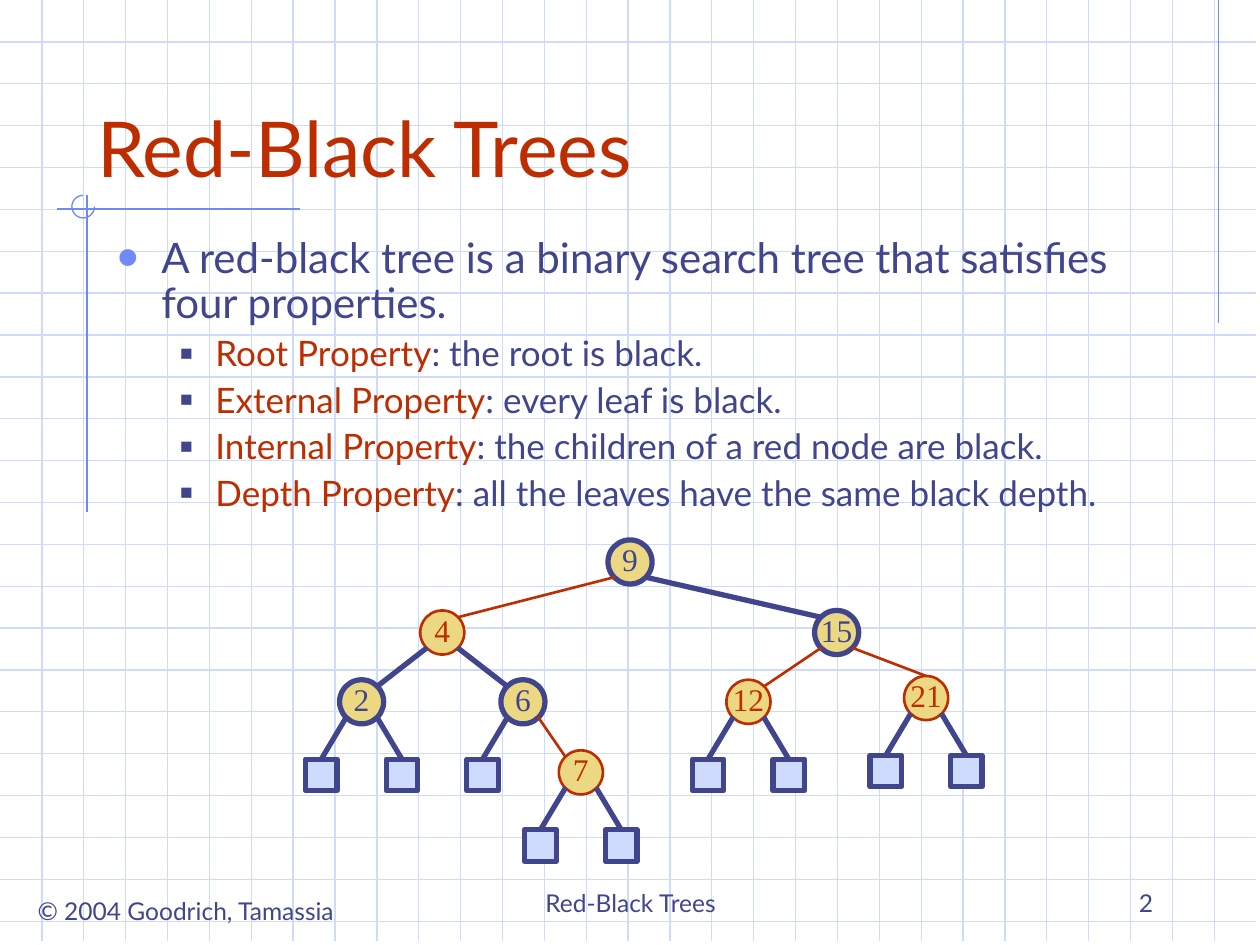
from dataclasses import dataclass
from typing import Optional

from lxml import etree
from pptx import Presentation
from pptx.dml.color import RGBColor
from pptx.enum.shapes import MSO_CONNECTOR, MSO_SHAPE
from pptx.enum.text import MSO_ANCHOR, MSO_AUTO_SIZE, PP_ALIGN
from pptx.oxml.ns import qn
from pptx.util import Inches, Pt

STRAIGHT = MSO_CONNECTOR.STRAIGHT
ELLIPSE, SQUARE, ARC = MSO_SHAPE.OVAL, MSO_SHAPE.RECTANGLE, MSO_SHAPE.ARC
TOP, MIDDLE, BOTTOM = MSO_ANCHOR.TOP, MSO_ANCHOR.MIDDLE, MSO_ANCHOR.BOTTOM
LEFT, CENTER, RIGHT = PP_ALIGN.LEFT, PP_ALIGN.CENTER, PP_ALIGN.RIGHT
NO_AUTOFIT = MSO_AUTO_SIZE.NONE

NAVY, RED, BLUE, PALE, GOLD = "40458C", "BE2D00", "6F89F7", "CFDBFD", "ECD882"
SANS, SERIF = "Lato", "Times New Roman"

PAPER_WIDTH, PAPER_HEIGHT = 9.97, 7.47
PAPER_COLUMNS, PAPER_ROWS = 30, 23
PITCH = PAPER_WIDTH / PAPER_COLUMNS

NODE_SIZE, LEAF_SIZE = 0.35, 0.25
JOINT = 0.12  # offset of a circle's diagonal joints from its centre
LEAF_SPREAD, LEAF_DROP = 0.32, 0.58
LINE_WIDTH = {NAVY: 3, RED: 1.5}

PROPERTIES = [
    ("Root Property", ": the root is black."),
    ("External Property", ": every leaf is black."),
    ("Internal Property", ": the children of a red node are black."),
    ("Depth Property", ": all the leaves have the same black depth."),
]


@dataclass
class Node:
    """A tree node by its centre; a missing child is an external leaf."""
    key: str
    color: str
    x: float
    y: float
    left: Optional["Node"] = None
    right: Optional["Node"] = None
    joined_at_top: bool = False


TREE = Node("9", NAVY, 5, 4.46,
            Node("4", RED, 3.51, 5.02,
                 Node("2", NAVY, 2.87, 5.57),
                 Node("6", NAVY, 4.15, 5.57,
                      right=Node("7", RED, 4.61, 6.13))),
            Node("15", NAVY, 6.64, 5.02,
                 Node("12", RED, 5.94, 5.57),
                 Node("21", RED, 7.35, 5.54, joined_at_top=True)))


def rgb(color):
    return RGBColor.from_string(color)


def set_values(target, values):
    for name, value in values.items():
        setattr(target, name, value)


def place(shape, left, top, width, height):
    set_values(shape, {"left": Inches(left), "top": Inches(top),
                       "width": Inches(width), "height": Inches(height)})


def style_line(line, color, width):
    line.color.rgb = rgb(color)
    line.width = Pt(width)


def add_run(paragraph, text, size, color, font=SANS):
    run = paragraph.add_run()
    run.text = text
    set_values(run.font, {"name": font, "size": Pt(size)})
    run.font.color.rgb = rgb(color)


def add_line(slide, start, end, color, width=0.75):
    line = slide.shapes.add_connector(
        STRAIGHT, *(Inches(value) for value in (*start, *end)))
    style_line(line.line, color, width)
    etree.SubElement(line.element.spPr, qn("a:effectLst"))
    return line


def add_preset(slide, preset, center, size, fill, color, width):
    left, top = (value - size / 2 for value in center)
    shape = slide.shapes.add_shape(
        preset, *(Inches(value) for value in (left, top, size, size)))
    shape.shadow.inherit = False
    if fill:
        shape.fill.solid()
        shape.fill.fore_color.rgb = rgb(fill)
    else:
        shape.fill.background()
    style_line(shape.line, color, width)
    return shape


def add_graph_paper(slide):
    for row in range(1, PAPER_ROWS):
        add_line(slide, (0, row * PITCH), (PAPER_WIDTH, row * PITCH), PALE)
    for column in range(1, PAPER_COLUMNS):
        add_line(slide, (column * PITCH, 0), (column * PITCH, PAPER_HEIGHT), PALE)


def add_ornament(slide):
    add_line(slide, (9.67, 0), (9.67, 2.56), BLUE)
    add_line(slide, (2.38, 1.66), (0.45, 1.66), BLUE)
    add_line(slide, (0.69, 1.55), (0.69, 4.06), BLUE)
    arc = add_preset(slide, ARC, (0.66, 1.64), 0.18, None, BLUE, 0.75)
    arc.adjustments[0] = 0
    arc.adjustments[1] = 162  # 270 degrees


def add_footer(slide, text, box, alignment, anchor, wrap=True):
    footer = slide.shapes.add_textbox(*(Inches(value) for value in box))
    set_values(footer.text_frame, {"word_wrap": wrap, "vertical_anchor": anchor})
    paragraph = footer.text_frame.paragraphs[0]
    paragraph.alignment = alignment
    add_run(paragraph, text, 14, NAVY)


def fill_title(title, text):
    place(title, 0.67, 0.33, 8.5, 1.25)
    set_values(title.text_frame, {"vertical_anchor": BOTTOM, "auto_size": NO_AUTOFIT})
    paragraph = title.text_frame.paragraphs[0]
    paragraph.alignment = LEFT
    add_run(paragraph, text, 44, RED)


def format_bullet(paragraph, character, color, percent, indent, hanging, before):
    properties = paragraph._p.get_or_add_pPr()
    properties.set("marL", str(Inches(indent)))
    properties.set("indent", str(-Inches(hanging)))
    bullet_color = etree.SubElement(properties, qn("a:buClr"))
    etree.SubElement(bullet_color, qn("a:srgbClr"), val=color)
    etree.SubElement(properties, qn("a:buSzPct"), val=str(percent * 1000))
    etree.SubElement(properties, qn("a:buChar"), char=character)
    set_values(paragraph, {"line_spacing": 0.9, "space_before": Pt(before)})


def fill_body(body):
    place(body, 0.83, 1.83, 8.58, 2.42)
    frame = body.text_frame
    set_values(frame, {"vertical_anchor": TOP, "auto_size": NO_AUTOFIT})
    definition = frame.paragraphs[0]
    format_bullet(definition, "•", BLUE, 147, 0.35, 0.35, 0)
    add_run(definition, "A red-black tree is a binary search tree that "
                        "satisfies four properties.", 24, NAVY)
    for name, meaning in PROPERTIES:
        paragraph = frame.add_paragraph()
        paragraph.level = 1
        format_bullet(paragraph, "■", NAVY, 60, 0.78, 0.28, 5)
        add_run(paragraph, name, 20, RED)
        add_run(paragraph, meaning, 20, NAVY)


def add_node(slide, node):
    circle = add_preset(slide, ELLIPSE, (node.x, node.y), NODE_SIZE, GOLD,
                        node.color, LINE_WIDTH[node.color])
    frame = circle.text_frame
    set_values(frame, {"margin_left": 0, "margin_right": 0, "margin_top": 0,
                       "margin_bottom": Inches(0.05), "word_wrap": False,
                       "vertical_anchor": MIDDLE})
    frame.paragraphs[0].alignment = CENTER
    add_run(frame.paragraphs[0], node.key, 18, node.color, SERIF)
    return circle


def add_subtree(slide, node):
    """Draw a node, its edges and everything below; return the node's circle."""
    circle = add_node(slide, node)
    for side, child in ((-1, node.left), (1, node.right)):
        start = (node.x + side * JOINT, node.y + JOINT)
        if child:
            target, color = add_subtree(slide, child), child.color
            end = (child.x - side * JOINT, child.y - JOINT)
        else:
            color = NAVY
            end = (node.x + side * LEAF_SPREAD, node.y + LEAF_DROP)
            target = add_preset(slide, SQUARE, end, LEAF_SIZE, PALE, NAVY, 3)
        edge = add_line(slide, start, end, color, LINE_WIDTH[color])
        if child is None or child.joined_at_top:
            edge.end_connect(target, 0)
    return circle


def main():
    presentation = Presentation()
    set_values(presentation, {"slide_width": Inches(10), "slide_height": Inches(7.5)})
    slide = presentation.slides.add_slide(presentation.slide_layouts[1])
    title, body = slide.placeholders
    add_graph_paper(slide)
    add_ornament(slide)
    for placeholder in (title, body):  # bring the text in front of the paper
        placeholder.element.getparent().append(placeholder.element)
    fill_title(title, "Red-Black Trees")
    fill_body(body)
    add_footer(slide, "© 2004 Goodrich, Tamassia", (0.18, 7.06, 2.59, 0.34), CENTER, TOP, False)
    add_footer(slide, "Red-Black Trees", (3.42, 6.83, 3.17, 0.5), CENTER, BOTTOM)
    add_footer(slide, "2", (7.17, 6.83, 2.08, 0.5), RIGHT, BOTTOM)
    add_subtree(slide, TREE)
    presentation.save("out.pptx")


if __name__ == "__main__":
    main()
